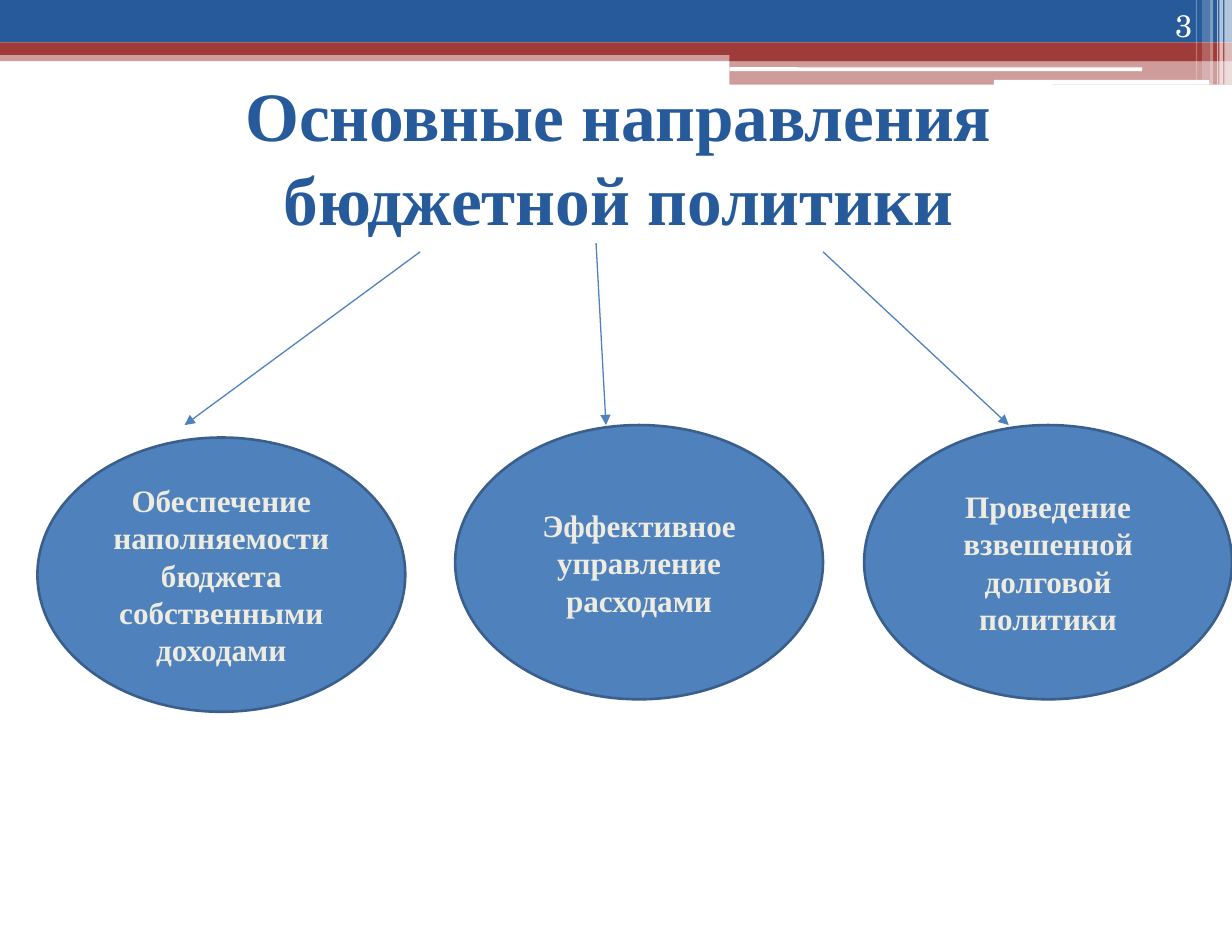
from lxml import etree
from pptx import Presentation
from pptx import util as u
from pptx.dml.color import RGBColor
from pptx.enum import shapes, text
from pptx.oxml.ns import qn

BLUE, RED, WHITE = "265A9A", "9F3B38", "FFFFFF"
OVAL_FILL, OVAL_LINE, OVAL_TEXT = "4F81BD", "3A5F8C", "EEECE1"
SERIF = "Times New Roman"


def color(value):
    return RGBColor.from_string(value)


class SlideBuilder:
    def __init__(self, page):
        self.page = page

    def shape(self, kind, bounds, fill, opacity=100):
        shape = self.page.shapes.add_shape(kind, *map(u.Inches, bounds))
        shape.shadow.inherit = False
        shape.fill.solid()
        shape.fill.fore_color.rgb = color(fill)
        shape.line.fill.background()
        if opacity < 100:
            tint = shape._element.spPr.find(".//" + qn("a:srgbClr"))
            etree.SubElement(tint, qn("a:alpha"), val=str(opacity * 1000))
        return shape

    def bar(self, bounds, fill, opacity=100):
        self.shape(shapes.MSO_SHAPE.RECTANGLE, bounds, fill, opacity)

    def rounded_bar(self, bounds, fill):
        bar = self.shape(shapes.MSO_SHAPE.ROUNDED_RECTANGLE, bounds, fill)
        bar.adjustments[0] = 0.17

    def set_text(self, shape, words, size, fill, font=SERIF, bold=True,
                 align=text.PP_ALIGN.CENTER, anchor=text.MSO_ANCHOR.MIDDLE):
        frame = shape.text_frame
        frame.word_wrap = True
        frame.vertical_anchor = anchor
        para = frame.paragraphs[0]
        para.text = words
        para.alignment = align
        para.font.size = u.Pt(size)
        para.font.name = font
        para.font.bold = bold
        para.font.color.rgb = color(fill)

    def label(self, bounds, words, size, fill, **style):
        box = self.page.shapes.add_textbox(*map(u.Inches, bounds))
        self.set_text(box, words, size, fill, **style)

    def oval(self, left, top, words):
        oval = self.shape(shapes.MSO_SHAPE.OVAL, (left, top, 2.95, 2.2), OVAL_FILL)
        oval.line.color.rgb = color(OVAL_LINE)
        oval.line.width = u.Pt(1.5)
        self.set_text(oval, words, 18, OVAL_TEXT)

    def arrow(self, start, end):
        arrow = self.page.shapes.add_connector(
            shapes.MSO_CONNECTOR.STRAIGHT, *map(u.Inches, start + end))
        arrow.line.color.rgb = color(OVAL_FILL)
        arrow.line.width = u.Pt(0.75)
        outline = arrow._element.spPr.find(qn("a:ln"))
        etree.SubElement(outline, qn("a:tailEnd"), type="triangle")
        etree.SubElement(arrow._element.spPr, qn("a:effectLst"))


def main():
    deck = Presentation()
    deck.slide_width, deck.slide_height = u.Inches(9.88), u.Inches(7.5)
    slide = SlideBuilder(deck.slides.add_slide(deck.slide_layouts[6]))

    for bounds, fill, opacity in (
        ((0, 0.4, 9.88, 0.09), RED, 50),
        ((0, 0, 9.88, 0.34), BLUE, 100),
        ((0, 0.34, 9.88, 0.1), RED, 100),
        ((5.85, 0.39, 4.04, 0.1), RED, 100),
        ((5.85, 0.48, 4.04, 0.2), RED, 50),
    ):
        slide.bar(bounds, fill, opacity)

    slide.rounded_bar((5.85, 0.54, 3.31, 0.03), WHITE)
    slide.rounded_bar((7.97, 0.64, 1.73, 0.04), WHITE)

    for left, width, height, opacity in (
        (9.82, 0.06, 0.68, 65),
        (9.78, 0.03, 0.68, 65),
        (9.76, 0.01, 0.68, 60),
        (9.7, 0.03, 0.68, 40),
        (9.64, 0.06, 0.64, 20),
        (9.59, 0.01, 0.64, 30),
    ):
        slide.bar((left, 0, width, height), WHITE, opacity)

    slide.label((8.84, 0, 0.82, 0.4), "3", 18, WHITE, font="TeX Gyre Schola",
                bold=False, align=text.PP_ALIGN.RIGHT, anchor=text.MSO_ANCHOR.BOTTOM)
    slide.label((0.57, 0.72, 8.78, 1.06),
                "Основные направления бюджетной политики", 40, BLUE)

    for left, top, words, start, end in (
        (0.3, 3.51, "Обеспечение наполняемости бюджета собственными доходами",
         (3.37, 2.02), (1.48, 3.41)),
        (3.65, 3.41, "Эффективное управление расходами",
         (4.78, 1.95), (4.86, 3.41)),
        (6.93, 3.41, "Проведение взвешенной долговой политики",
         (6.6, 2.02), (8.09, 3.41)),
    ):
        slide.oval(left, top, words)
        slide.arrow(start, end)

    deck.save("out.pptx")


if __name__ == "__main__":
    main()
